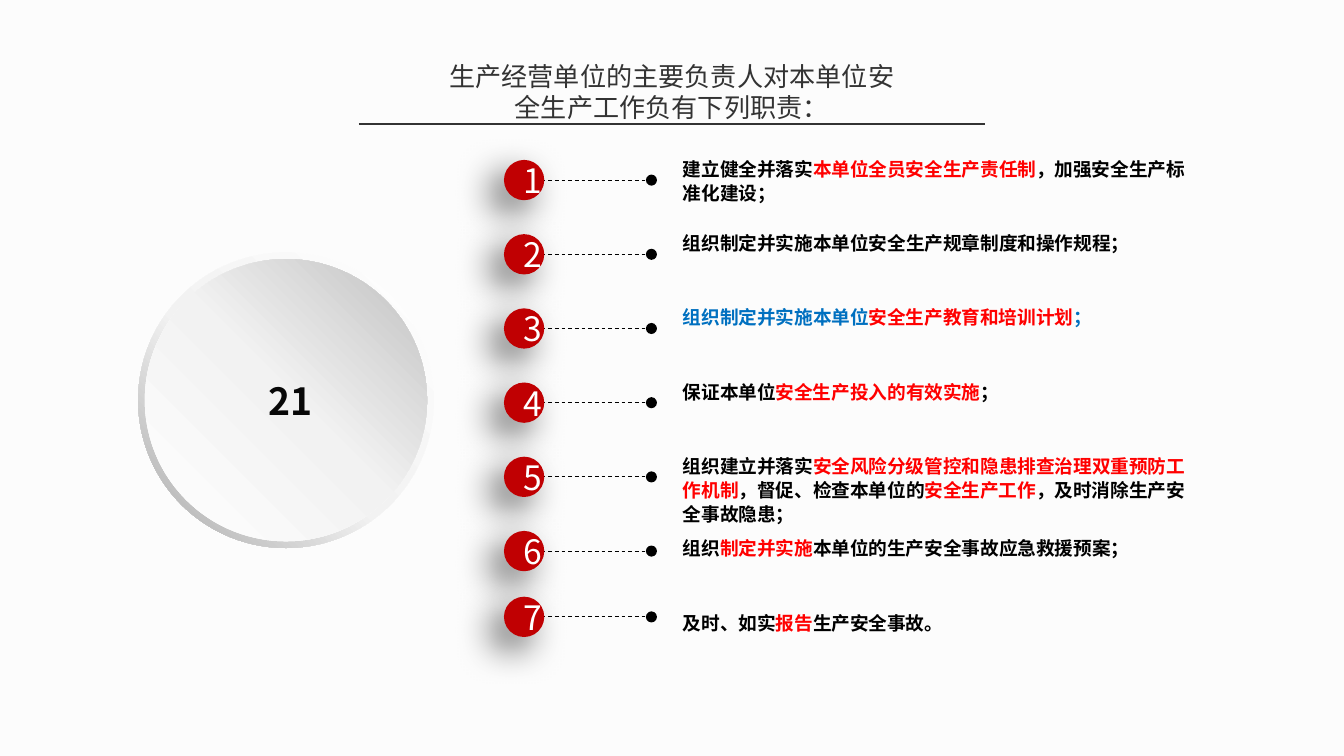
from lxml import etree
from pptx import Presentation
from pptx.dml.color import RGBColor
from pptx.enum.dml import MSO_LINE
from pptx.enum.shapes import MSO_CONNECTOR, MSO_SHAPE
from pptx.enum.text import MSO_ANCHOR, PP_ALIGN
from pptx.oxml import parse_xml
from pptx.oxml.ns import nsdecls, qn
from pptx.util import Pt

FONT = "Noto Sans CJK SC"
BACKGROUND = RGBColor(0xFC, 0xFC, 0xFC)
WHITE = RGBColor(0xFF, 0xFF, 0xFF)
BLACK = RGBColor(0, 0, 0)
NEAR_BLACK = RGBColor(0x08, 0x08, 0x08)
GREY = RGBColor(0x33, 0x33, 0x33)
PALE = RGBColor(0xF2, 0xF2, 0xF2)
RIM = RGBColor(0xA6, 0xA6, 0xA6)
DISC = RGBColor(0xBF, 0xBF, 0xBF)
DARK_RED = RGBColor(0xC0, 0x00, 0x02)
RED = RGBColor(0xFF, 0, 0)
BLUE = RGBColor(0x00, 0x70, 0xC0)

ROW_TOP, ROW_STEP = 96.5, 39.75
BADGE = 21.6
DUTIES = [
    [("建立健全并落实", BLACK), ("本单位全员安全生产责任制", RED),
     ("，加强安全生产标准化建设；", BLACK)],
    [("组织制定并实施本单位安全生产规章制度和操作规程；", BLACK)],
    [("组织制定并实施本单位", BLUE), ("安全生产教育和培训计划", RED),
     ("；", BLUE)],
    [("保证本单位", BLACK), ("安全生产投入的有效实施", RED), ("；", BLACK)],
    [("组织建立并落实", BLACK),
     ("安全风险分级管控和隐患排查治理双重预防工作机制", RED),
     ("，督促、检查本单位的", BLACK), ("安全生产工作", RED),
     ("，及时消除生产安全事故隐患；", BLACK)],
    [("组织", BLACK), ("制定并实施", RED),
     ("本单位的生产安全事故应急救援预案；", BLACK)],
    [("及时、如实", BLACK), ("报告", RED), ("生产安全事故。", BLACK)],
]
TEXT_RISE = [13, 13, 13, 13, 13, 8.6, 3.6]


def write(tf, runs, size, bold=False, align=PP_ALIGN.LEFT, spacing=None,
          anchor=MSO_ANCHOR.TOP):
    tf.word_wrap = True
    tf.vertical_anchor = anchor
    p = tf.paragraphs[0]
    p.alignment = align
    if spacing:
        p.line_spacing = Pt(spacing)
    for text, color in runs:
        r = p.add_run()
        r.text = text
        r.font.size = Pt(size)
        r.font.bold = bold
        r.font.color.rgb = color
        r.font.name = FONT
        etree.SubElement(r._r.rPr, qn("a:ea")).set("typeface", FONT)


def add_text(s, box, runs, size, inset=True, **fmt):
    tf = s.shapes.add_textbox(*map(Pt, box)).text_frame
    if not inset:
        tf.margin_left = tf.margin_right = tf.margin_top = tf.margin_bottom = 0
    write(tf, runs, size, **fmt)


def add_line(s, x1, x2, y, color, width, dotted=False):
    line = s.shapes.add_connector(MSO_CONNECTOR.STRAIGHT,
                                  Pt(x1), Pt(y), Pt(x2), Pt(y))
    line.line.color.rgb = color
    line.line.width = Pt(width)
    if dotted:
        line.line.dash_style = MSO_LINE.DASH
        etree.SubElement(line.line._get_or_add_ln(), qn("a:tailEnd")).set("type", "oval")
    etree.SubElement(line._element.spPr, qn("a:effectLst"))


def add_round(s, kind, x, y, size):
    sp = s.shapes.add_shape(kind, Pt(x), Pt(y), Pt(size), Pt(size))
    sp.shadow.inherit = False
    sp.line.fill.background()
    return sp


def set_gradient(sp, stops, angle):
    sp.fill.gradient()
    grad = sp._element.spPr.find(qn("a:gradFill"))
    stop_list = "".join(
        f'<a:gs pos="{pos * 1000}"><a:srgbClr val="{color}"/></a:gs>'
        for pos, color in stops)
    grad.getparent().replace(grad, parse_xml(
        f'<a:gradFill {nsdecls("a")} rotWithShape="1"><a:gsLst>{stop_list}</a:gsLst>'
        f'<a:lin ang="{angle * 60000}" scaled="0"/></a:gradFill>'))


def add_badge(s, number, y):
    sp = add_round(s, MSO_SHAPE.OVAL, 270, y - BADGE / 2, BADGE)
    sp.fill.solid()
    sp.fill.fore_color.rgb = DARK_RED
    sp._element.spPr.find(qn("a:effectLst")).append(parse_xml(
        f'<a:outerShdw {nsdecls("a")} blurRad="{Pt(20)}" dist="{Pt(10)}" '
        'dir="8100000" algn="tr" rotWithShape="0"><a:srgbClr val="000000">'
        '<a:alpha val="60000"/></a:srgbClr></a:outerShdw>'))
    write(sp.text_frame, [(str(number), WHITE)], 18,
          align=PP_ALIGN.CENTER, anchor=MSO_ANCHOR.MIDDLE)


def add_dial(s):
    ring = add_round(s, MSO_SHAPE.DONUT, 74, 135.2, 158.4)
    ring.adjustments[0] = 0.05
    set_gradient(ring, [(0, WHITE), (55, PALE), (100, RIM)], 135)
    disc = add_round(s, MSO_SHAPE.OVAL, 77.6, 138.8, 151.2)
    set_gradient(disc, [(0, WHITE), (51, PALE), (100, DISC)], 315)
    add_text(s, (100.8, 202.3, 110.2, 24.5), [("21", NEAR_BLACK)], 20, inset=False,
             bold=True, align=PP_ALIGN.CENTER, anchor=MSO_ANCHOR.MIDDLE)


def main():
    prs = Presentation()
    prs.slide_width, prs.slide_height = Pt(720), Pt(405)
    s = prs.slides.add_slide(prs.slide_layouts[6])
    s.background.fill.solid()
    s.background.fill.fore_color.rgb = BACKGROUND

    add_text(s, (226.8, 28.8, 266.4, 41),
             [("生产经营单位的主要负责人对本单位安全生产工作负有下列职责：", GREY)],
             14, align=PP_ALIGN.CENTER, spacing=16.8)
    add_line(s, 192.2, 527.8, 66.4, GREY, 0.75)
    add_dial(s)

    centers = [ROW_TOP + i * ROW_STEP for i in range(6)] + [330.5]
    for y, duty, rise in zip(centers, DUTIES, TEXT_RISE):
        add_text(s, (365.8, y - rise, 272.2, 26), duty, 10, inset=False,
                 bold=True, spacing=13)
        add_line(s, 286.6, 349, y, BLACK, 0.5, dotted=True)
    for number, y in enumerate(centers, 1):
        add_badge(s, number, y)

    prs.save("out.pptx")


if __name__ == "__main__":
    main()
